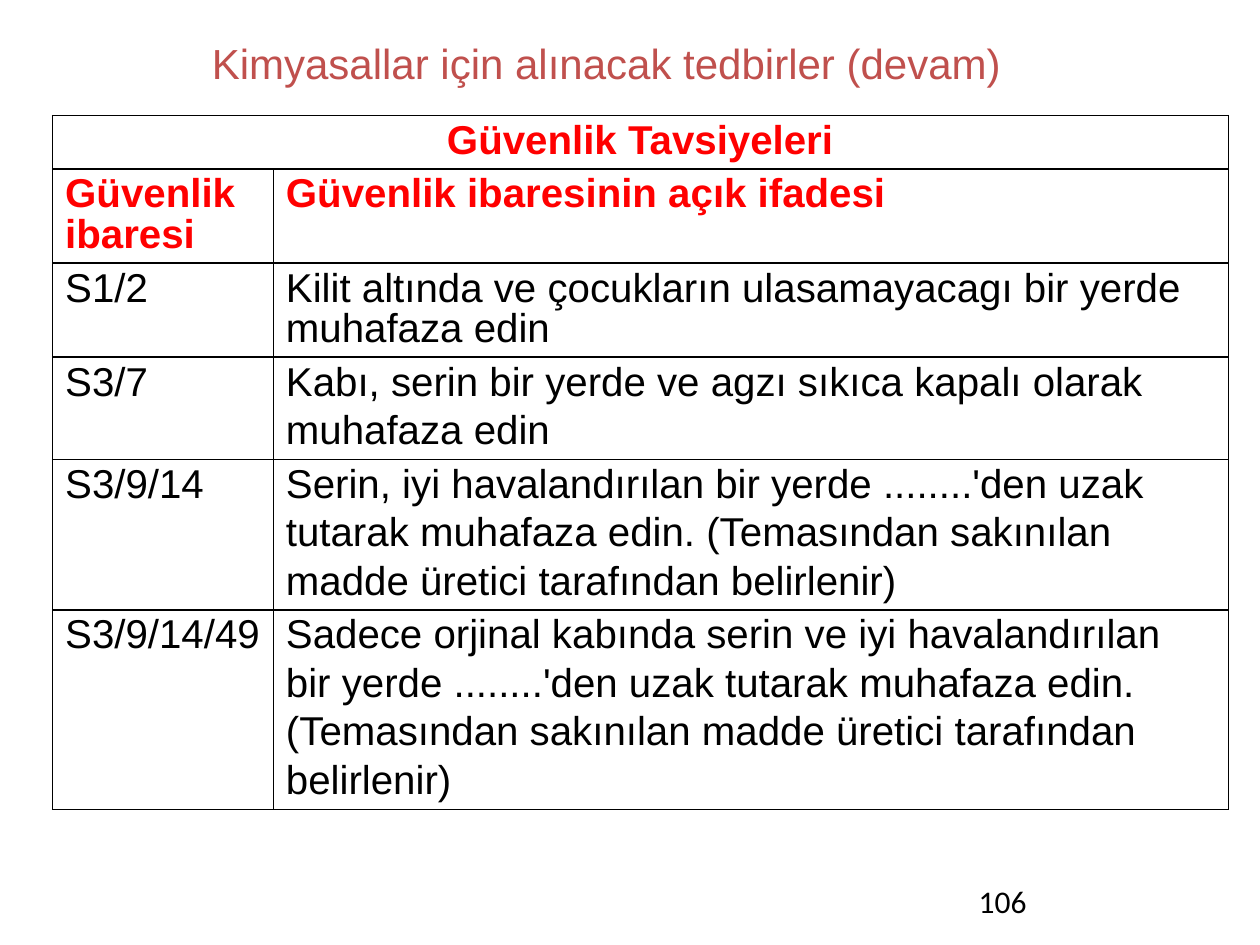
import lxml.etree
import pptx
import pptx.dml.color
import pptx.enum.text
import pptx.oxml.ns
import pptx.util

Cm = pptx.util.Cm
Pt = pptx.util.Pt
ALIGN = pptx.enum.text.PP_ALIGN
ANCHOR = pptx.enum.text.MSO_ANCHOR
FIT = pptx.enum.text.MSO_AUTO_SIZE

COLS = [4.45, 19.25]
HEIGHTS = [1.08, 1.89, 1.89, 2.06, 3.02, 4.03]
ROWS = [
    ("Güvenlik Tavsiyeleri", ""),
    ("Güvenlik ibaresi", "Güvenlik ibaresinin açık ifadesi"),
    ("S1/2", "Kilit altında ve çocukların ulasamayacagı bir yerde muhafaza edin"),
    ("S3/7", "Kabı, serin bir yerde ve agzı sıkıca kapalı olarak\nmuhafaza edin"),
    ("S3/9/14", "Serin, iyi havalandırılan bir yerde ........'den uzak\n"
     "tutarak muhafaza edin. (Temasından sakınılan\n"
     "madde üretici tarafından belirlenir)"),
    ("S3/9/14/49", "Sadece orjinal kabında serin ve iyi havalandırılan\n"
     "bir yerde ........'den uzak tutarak muhafaza edin.\n"
     "(Temasından sakınılan madde üretici tarafından\n"
     "belirlenir)"),
]


def color(code):
    return pptx.dml.color.RGBColor.from_string(code)


def write(frame, text, size=23, font="Arial", ink="000000", bold=False,
          align=ALIGN.LEFT, line=1.0, before=0, indent=0):
    for num, part in enumerate(text.split("\n")):
        para = frame.paragraphs[0] if num == 0 else frame.add_paragraph()
        para.alignment = align
        para.line_spacing = line
        para.space_before = Pt(before)
        if indent:
            para._p.get_or_add_pPr().set("marL", str(Cm(indent)))
        run = para.add_run()
        run.text = part
        run.font.size = Pt(size)
        run.font.name = font
        run.font.bold = bold
        run.font.color.rgb = color(ink)


def add_text(slide, text, left, top, width, height, wrap=True,
             fit=FIT.NONE, anchor=ANCHOR.TOP, **style):
    box = slide.shapes.add_textbox(Cm(left), Cm(top), Cm(width), Cm(height))
    frame = box.text_frame
    frame.word_wrap = wrap
    frame.auto_size = fit
    frame.vertical_anchor = anchor
    write(frame, text, **style)


def border(cell, ink="000000", width=1):
    qn = pptx.oxml.ns.qn
    props = cell._tc.get_or_add_tcPr()
    for num, side in enumerate(("lnL", "lnR", "lnT", "lnB")):
        edge = lxml.etree.Element(qn("a:" + side), w=str(Pt(width)))
        fill = lxml.etree.SubElement(edge, qn("a:solidFill"))
        lxml.etree.SubElement(fill, qn("a:srgbClr"), val=ink)
        props.insert(num, edge)


def add_grid(slide, left, top):
    frame = slide.shapes.add_table(len(ROWS), len(COLS), Cm(left), Cm(top),
                                   Cm(sum(COLS)), Cm(sum(HEIGHTS)))
    table = frame.table
    table.first_row = False
    table.horz_banding = False
    for col, width in zip(table.columns, COLS):
        col.width = Cm(width)
    for row, height in zip(table.rows, HEIGHTS):
        row.height = Cm(height)
    table.cell(0, 0).merge(table.cell(0, 1))
    for r, texts in enumerate(ROWS):
        head = r < 2
        for c, text in enumerate(texts):
            cell = table.cell(r, c)
            cell.fill.background()
            border(cell)
            if text:
                write(cell.text_frame, text, bold=head,
                      ink="FF0000" if head else "000000",
                      align=ALIGN.CENTER if r == 0 else ALIGN.LEFT,
                      line=0.9, before=4.5)


def main():
    deck = pptx.Presentation()
    deck.slide_width = Cm(25.4)
    deck.slide_height = Cm(19.05)
    slide = deck.slides.add_slide(deck.slide_layouts[6])
    add_text(slide, "106", 18.21, 17.65, 5.92, 1.02, anchor=ANCHOR.MIDDLE,
             size=18, font="Calibri", indent=1.27)
    add_grid(slide, 1.06, 2.33)
    add_text(slide, "Kimyasallar için alınacak tedbirler (devam)",
             4.02, 0.64, 16.43, 1.27, wrap=False, fit=FIT.SHAPE_TO_FIT_TEXT,
             size=24, ink="C0504D")
    deck.save("out.pptx")


if __name__ == "__main__":
    main()
